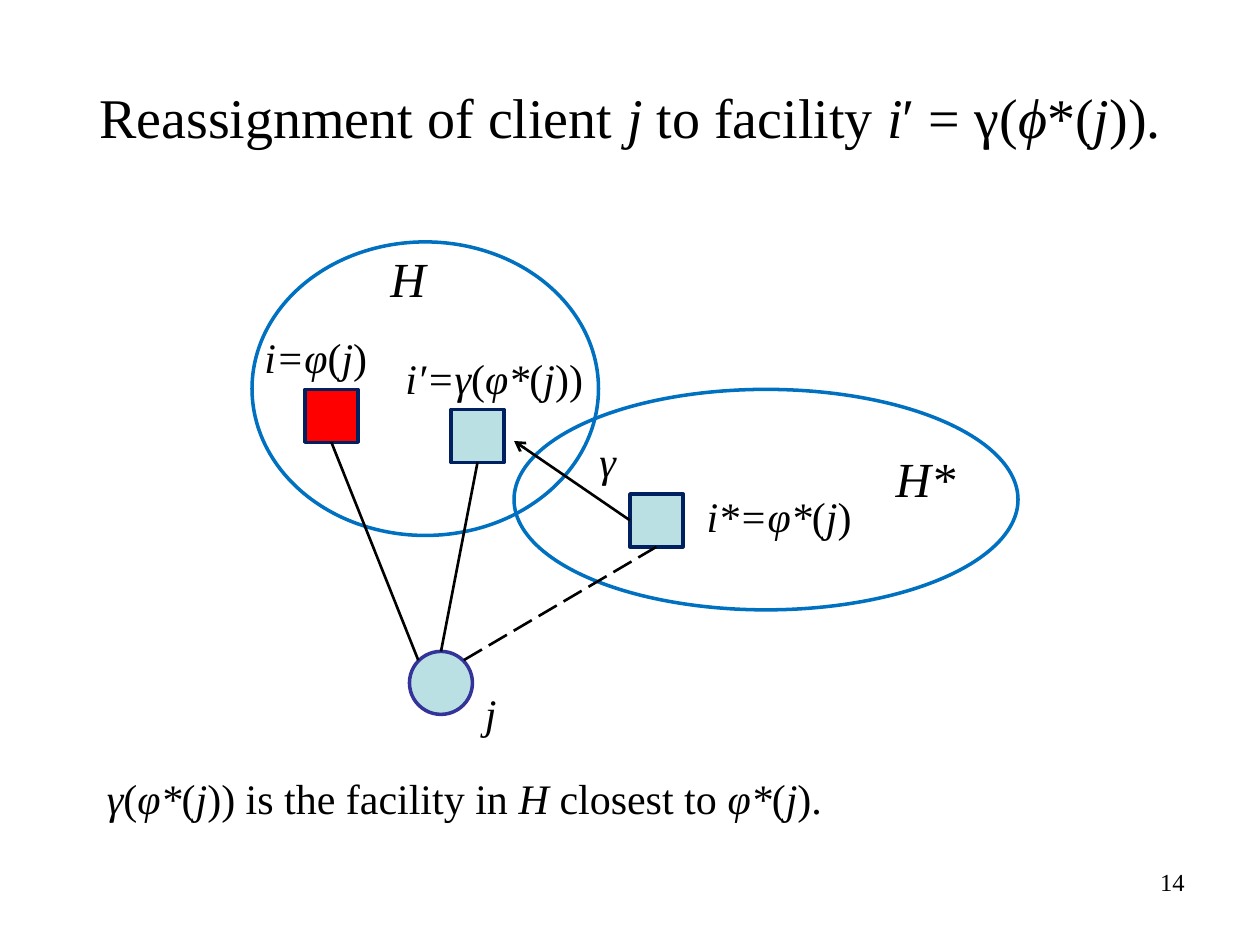
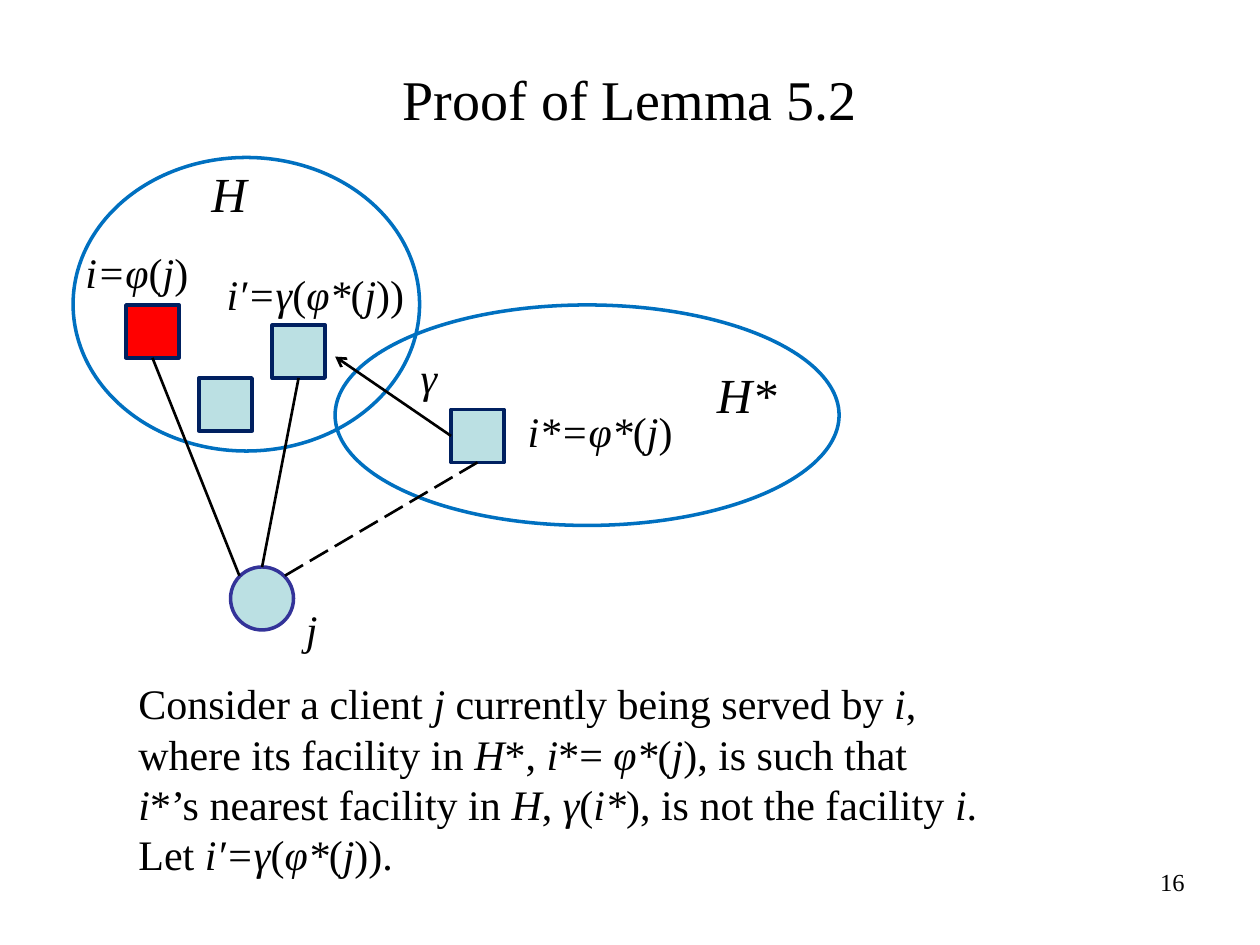
import pptx
import pptx.util
import pptx.dml.color
import pptx.enum.dml
import pptx.enum.shapes
import pptx.enum.text
from lxml import etree

Inches = pptx.util.Inches
Pt = pptx.util.Pt
SHAPES = pptx.enum.shapes.MSO_SHAPE
ALIGN = pptx.enum.text.PP_ALIGN
ANCHOR = pptx.enum.text.MSO_ANCHOR
AUTO_SIZE = pptx.enum.text.MSO_AUTO_SIZE
DASH = pptx.enum.dml.MSO_LINE

BLACK, SET_BLUE, NAVY, INDIGO = "000000", "0070C0", "002060", "333399"
PALE, RED = "BBE0E3", "FF0000"
FONT = "Times New Roman"
DRAWING_NS = "http://schemas.openxmlformats.org/drawingml/2006/main"
FACILITY_SIDE = 0.42
TOP, LEFT, BOTTOM = 0, 1, 2

FITTED = {"word_wrap": False, "auto_size": AUTO_SIZE.SHAPE_TO_FIT_TEXT}
STYLES = {
    "title": {"size": 32, "align": ALIGN.CENTER,
              "frame": {"word_wrap": True, "vertical_anchor": ANCHOR.MIDDLE}},
    "set name": {"size": 28, "align": ALIGN.LEFT, "frame": FITTED},
    "body": {"size": 24, "align": ALIGN.LEFT, "frame": FITTED},
    "page number": {"size": 14, "align": ALIGN.RIGHT, "frame": {"word_wrap": True}},
}

SET_NAMES = [("_H", 1, 0, 0.49), ("_H*", 5.01, 1.59, 0.68)]
FACILITY_LABELS = [
    ("_γ", 2.66, 1.49, 0.34),
    ("_i*=φ*_(_j_)", 3.51, 1.92, 1.36),
    ("_j", 1.75, 3.49, 0.29),
    ("_i=φ_(_j_)", 0, 0.66, 1.03),
    ("_i′=γ_(_φ*_(_j_))", 1.12, 0.83, 1.63),
]

PROOF_LINES = [
    "Consider a client _j_ currently being served by _i_,",
    "where its facility in _H_*, _i_*=_ φ*_(_j_), is such that",
    "_i_*’s nearest facility in _H_, _γ_(_i*_), is not the facility _i_.",
    "Let _i′=γ_(_φ*_(_j_)).",
]


def color(hex_value):
    return pptx.dml.color.RGBColor.from_string(hex_value)


def apply(target, values):
    for name, value in values.items():
        setattr(target, name, value)


def add_text(slide, box, lines, style_name):
    """Underscores in a line switch italics on and off."""
    style = STYLES[style_name]
    frame = slide.shapes.add_textbox(*map(Inches, box)).text_frame
    apply(frame, style["frame"])
    for number, line in enumerate(lines):
        paragraph = frame.add_paragraph() if number else frame.paragraphs[0]
        paragraph.alignment = style["align"]
        for part, wording in enumerate(line.split("_")):
            if wording:
                run = paragraph.add_run()
                run.text = wording
                apply(run.font, {"name": FONT, "size": Pt(style["size"]),
                                 "italic": part % 2 == 1})
                run.font.color.rgb = color(BLACK)


def add_outlined(slide, preset, box, line, fill=None):
    shape = slide.shapes.add_shape(preset, *map(Inches, box))
    shape.shadow.inherit = False
    if fill:
        shape.fill.solid()
        shape.fill.fore_color.rgb = color(fill)
    else:
        shape.fill.background()
    shape.line.color.rgb = color(line)
    shape.line.width = Pt(2)
    return shape


def add_facility(slide, x, y, fill=PALE):
    box = (x, y, FACILITY_SIDE, FACILITY_SIDE)
    return add_outlined(slide, SHAPES.FLOWCHART_PROCESS, box, NAVY, fill)


def add_link(slide, facility, site, end, dash=None, arrow=False):
    x, y = map(Inches, end)
    link = slide.shapes.add_connector(pptx.enum.shapes.MSO_CONNECTOR.STRAIGHT, x, y, x, y)
    link.begin_connect(facility, site)
    link.line.color.rgb = color(BLACK)
    apply(link.line, {"width": Pt(1.5), "dash_style": dash})
    if arrow:
        outline = link.line._get_or_add_ln()
        etree.SubElement(outline, f"{{{DRAWING_NS}}}tailEnd", type="arrow")
    etree.SubElement(link._element.spPr, f"{{{DRAWING_NS}}}effectLst")


def draw_reassignment(slide, left, top, spare_facility=False):
    add_outlined(slide, SHAPES.OVAL, (left, top, 2.75, 2.33), SET_BLUE)
    add_outlined(slide, SHAPES.OVAL, (left + 2.08, top + 1.17, 4, 1.75), SET_BLUE)
    client_box = (left + 1.25, top + 3.25, 0.5, 0.5)
    add_outlined(slide, SHAPES.FLOWCHART_CONNECTOR, client_box, INDIGO, PALE)

    current = add_facility(slide, left + 0.42, top + 1.17, RED)
    replacement = add_facility(slide, left + 1.58, top + 1.33)
    optimal = add_facility(slide, left + 3, top + 2)
    if spare_facility:
        add_facility(slide, left + 1, top + 1.75)

    add_link(slide, current, BOTTOM, (left + 1.32, top + 3.32))
    add_link(slide, replacement, BOTTOM, (left + 1.5, top + 3.25))
    add_link(slide, optimal, BOTTOM, (left + 1.68, top + 3.32), dash=DASH.LONG_DASH)
    add_link(slide, optimal, LEFT, (left + 2.08, top + 1.58), arrow=True)

    for labels, style_name, height in ((SET_NAMES, "set name", 0.57),
                                       (FACILITY_LABELS, "body", 0.5)):
        for wording, x, y, width in labels:
            add_text(slide, (left + x, top + y, width, height), [wording], style_name)


def add_page(deck, title, title_height, number):
    slide = deck.slides.add_slide(deck.slide_layouts[6])
    add_text(slide, (7.17, 6.83, 2.33, 0.52), [number], "page number")
    add_text(slide, (0.5, 0.3, 9, title_height), [title], "title")
    return slide


def main():
    deck = pptx.Presentation()
    apply(deck, {"slide_width": Inches(10), "slide_height": Inches(7.5)})

    reassignment = add_page(
        deck, "Reassignment of client _j _to facility _i_′ = γ(_ϕ_*(_j_)).", 1.25, "14")
    draw_reassignment(reassignment, 2, 1.92)
    add_text(reassignment, (0.75, 6.08, 5.93, 0.5),
             ["_γ_(_φ*_(_j_)) is the facility in _H_ closest to _φ*_(_j_)."], "body")

    proof = add_page(deck, "Proof of Lemma 5.2", 0.95, "16")
    draw_reassignment(proof, 0.58, 1.25, spare_facility=True)
    add_text(proof, (1, 5.33, 6.92, 1.72), PROOF_LINES, "body")

    deck.save("out.pptx")


if __name__ == "__main__":
    main()
